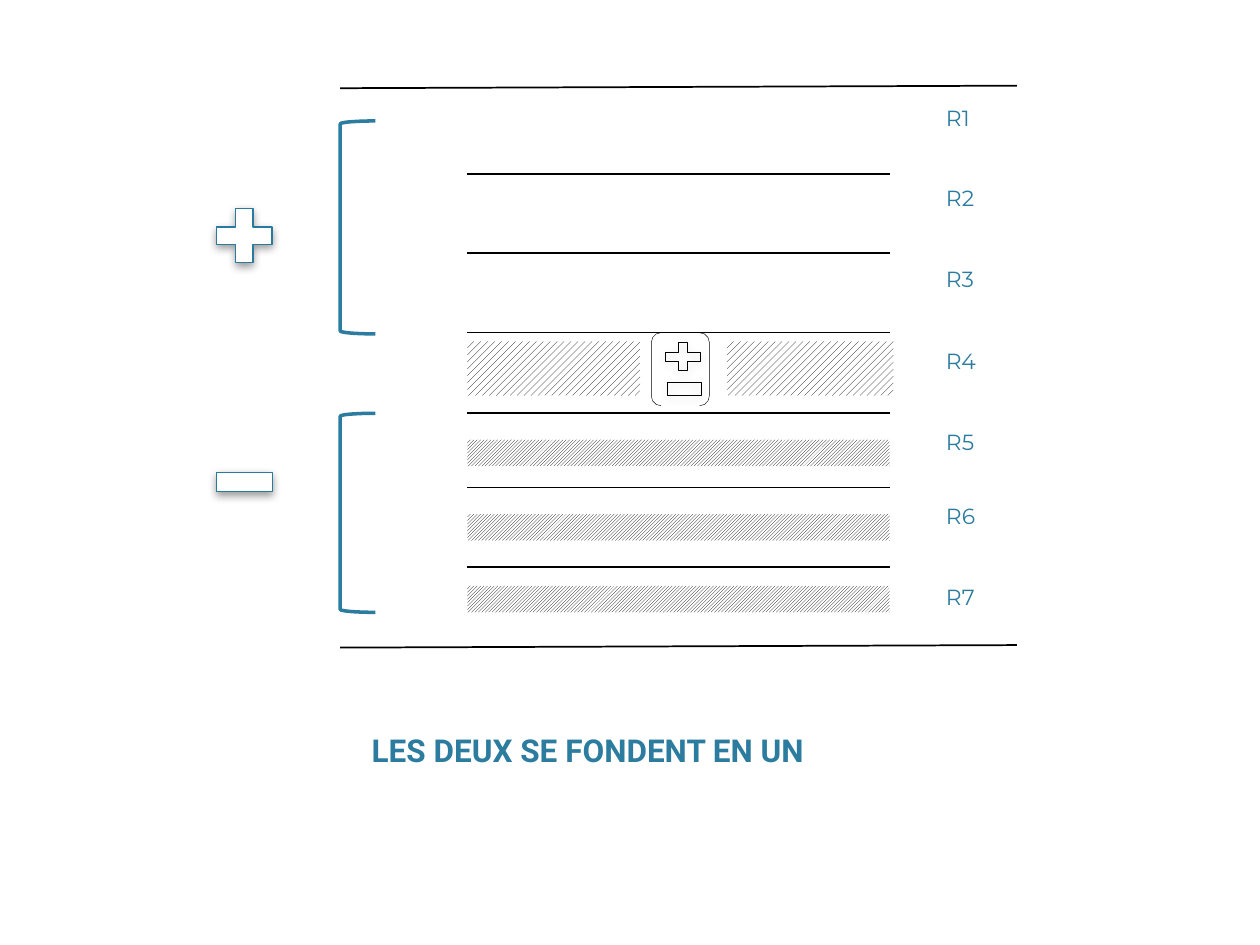
from lxml import etree
from pptx import Presentation
from pptx.dml.color import RGBColor
from pptx.enum import dml, shapes, text
from pptx.oxml.ns import qn
from pptx.util import Inches, Pt

COLORS = {"ink": "000000", "paper": "FFFFFF", "blue": "2C7C9F", "edge": "287A9E"}
HEADLINE = "LES DEUX SE FONDENT EN UN"

# label, top of the label
ROWS = [("R1", 0.78), ("R2", 1.42), ("R3", 2.06), ("R4", 2.71),
        ("R5", 3.35), ("R6", 3.94), ("R7", 4.58)]
DIVIDERS = [1.38, 2.01, 2.64, 3.28, 3.87, 4.5]
BORDERS = [0.7, 5.14]
BORDER_LEFT, BORDER_RIGHT, BORDER_RISE = 2.7, 8.07, 0.02
BAND_LEFT, BAND_WIDTH = 3.71, 3.35
LABEL_LEFT, LABEL_SIZE = 7.41, (0.66, 0.43)

WIDE, LIGHT = dml.MSO_PATTERN.WIDE_UPWARD_DIAGONAL, dml.MSO_PATTERN.LIGHT_UPWARD_DIAGONAL
MIXED_BANDS = [(BAND_LEFT, 2.71, 1.37, 0.43), (5.77, 2.71, 1.32, 0.43)]
MINUS_BANDS = [(BAND_LEFT, top, BAND_WIDTH, 0.21) for top in (3.49, 4.08, 4.65)]

KIND = shapes.MSO_SHAPE
# preset, box, fill, line colour, line width, shadow
SIGNS = [
    (KIND.MATH_PLUS, (5.23, 2.68, 0.38, 0.3), None, "ink", 0.25, True),
    (KIND.MATH_MINUS, (5.25, 2.87, 0.36, 0.43), None, "ink", 0.25, True),
    (KIND.DOUBLE_BRACKET, (5.17, 2.64, 0.46, 0.58), None, "ink", 0.25, False),
    (KIND.LEFT_BRACKET, (2.7, 0.96, 0.28, 1.69), None, "blue", 2, False),
    (KIND.LEFT_BRACKET, (2.7, 3.28, 0.28, 1.58), None, "blue", 2, False),
    (KIND.MATH_PLUS, (1.64, 1.58, 0.6, 0.58), "paper", "edge", 0.75, True),
    (KIND.MATH_MINUS, (1.64, 3.49, 0.6, 0.67), "paper", "edge", 0.5, True),
]


def color(name):
    return RGBColor.from_string(COLORS[name])


def inches(box):
    return [Inches(length) for length in box]


def write(holder, words, font, size, bold=False, wrap=True):
    frame = holder.text_frame
    frame.word_wrap = wrap
    frame.auto_size = text.MSO_AUTO_SIZE.SHAPE_TO_FIT_TEXT
    frame.vertical_anchor = text.MSO_ANCHOR.TOP
    paragraph = frame.paragraphs[0]
    paragraph.alignment = text.PP_ALIGN.LEFT
    paragraph.line_spacing = 1.0
    run = paragraph.add_run()
    run.text = words
    run.font.name, run.font.size, run.font.bold = font, Pt(size), bold
    run.font.color.rgb = color("blue")


def add_rule(slide, x1, y1, x2, y2):
    rule = slide.shapes.add_connector(shapes.MSO_CONNECTOR.STRAIGHT, *inches((x1, y1, x2, y2)))
    rule.line.color.rgb = color("ink")
    rule.line.width = Pt(1)
    etree.SubElement(rule.element.spPr, qn("a:effectLst"))


def add_band(slide, box, pattern):
    band = slide.shapes.add_shape(KIND.RECTANGLE, *inches(box))
    band.shadow.inherit = False
    band.fill.patterned()
    band.fill.pattern = pattern
    band.fill.fore_color.rgb = color("ink")
    band.fill.back_color.rgb = color("paper")
    band.line.fill.background()


def drop_shadow(sign):
    """Fill the empty effect list with a soft shadow that falls straight down."""
    effects = sign.element.spPr.find(qn("a:effectLst"))
    shadow = etree.SubElement(effects, qn("a:outerShdw"), blurRad=str(Pt(5)),
                              dist=str(Pt(2)), dir="5400000", rotWithShape="0")
    tint = etree.SubElement(shadow, qn("a:srgbClr"), val=COLORS["ink"])
    etree.SubElement(tint, qn("a:alpha"), val="40000")


def add_sign(slide, preset, box, fill, line, width, shadow):
    sign = slide.shapes.add_shape(preset, *inches(box))
    sign.shadow.inherit = False
    if fill:
        sign.fill.solid()
        sign.fill.fore_color.rgb = color(fill)
    else:
        sign.fill.background()
    sign.line.color.rgb = color(line)
    sign.line.width = Pt(width)
    if shadow:
        drop_shadow(sign)


def main():
    deck = Presentation()
    deck.slide_width, deck.slide_height = Inches(10), Inches(7.5)
    slide = deck.slides.add_slide(deck.slide_layouts[5])

    headline = slide.shapes.title
    headline.left, headline.top, headline.width, headline.height = inches((2.85, 5.75, 5.29, 0.5))
    write(headline, HEADLINE, "Roboto", 18, bold=True)

    for box in MIXED_BANDS:
        add_band(slide, box, WIDE)
    for y in BORDERS:
        add_rule(slide, BORDER_LEFT, y, BORDER_RIGHT, y - BORDER_RISE)
    for y in DIVIDERS:
        add_rule(slide, BAND_LEFT, y, BAND_LEFT + BAND_WIDTH, y)
    for label, top in ROWS:
        holder = slide.shapes.add_textbox(*inches((LABEL_LEFT, top, *LABEL_SIZE)))
        write(holder, label, "Montserrat", 12.5, wrap=False)
    for sign in SIGNS:
        add_sign(slide, *sign)
    for box in MINUS_BANDS:
        add_band(slide, box, LIGHT)

    deck.save("out.pptx")


if __name__ == "__main__":
    main()
